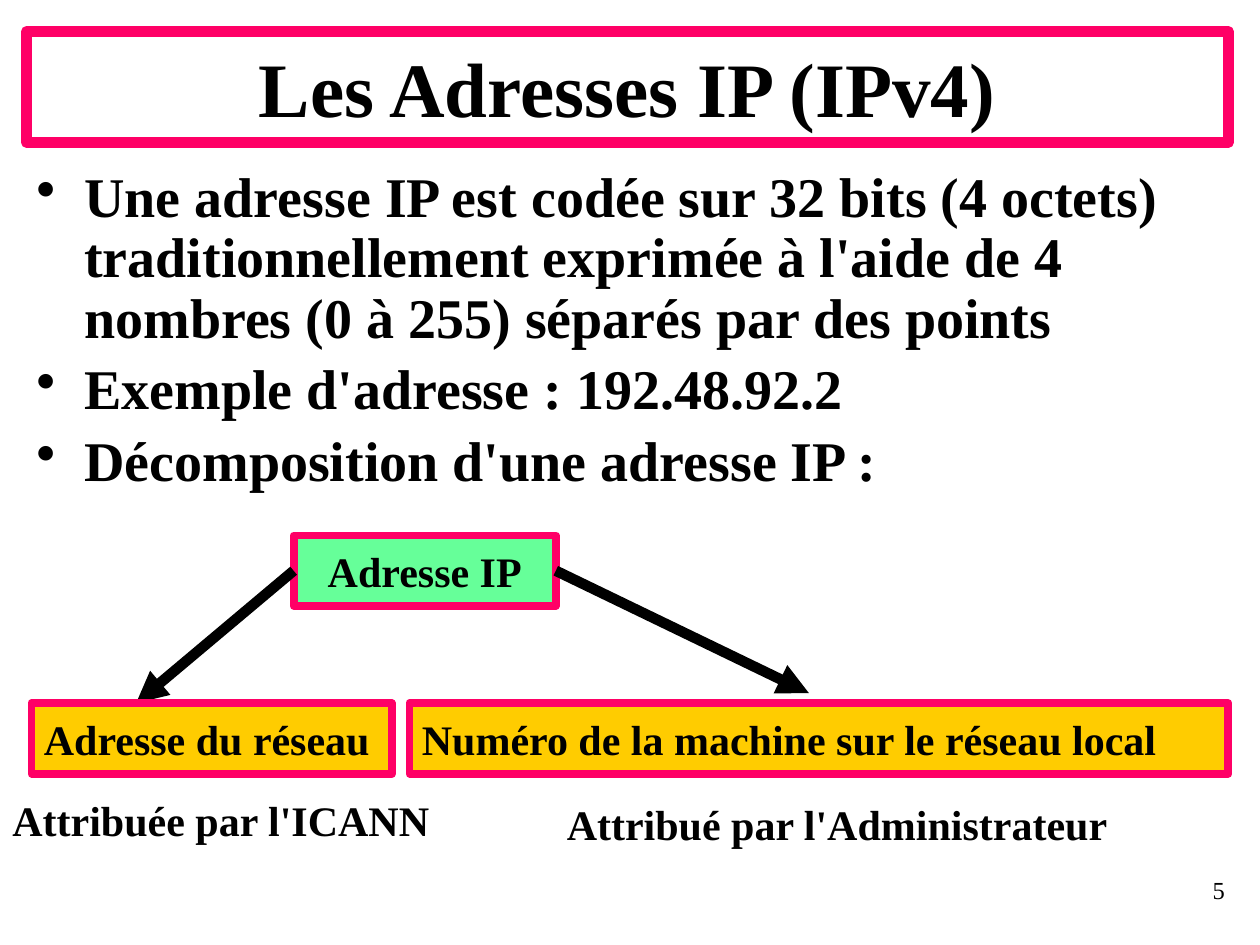
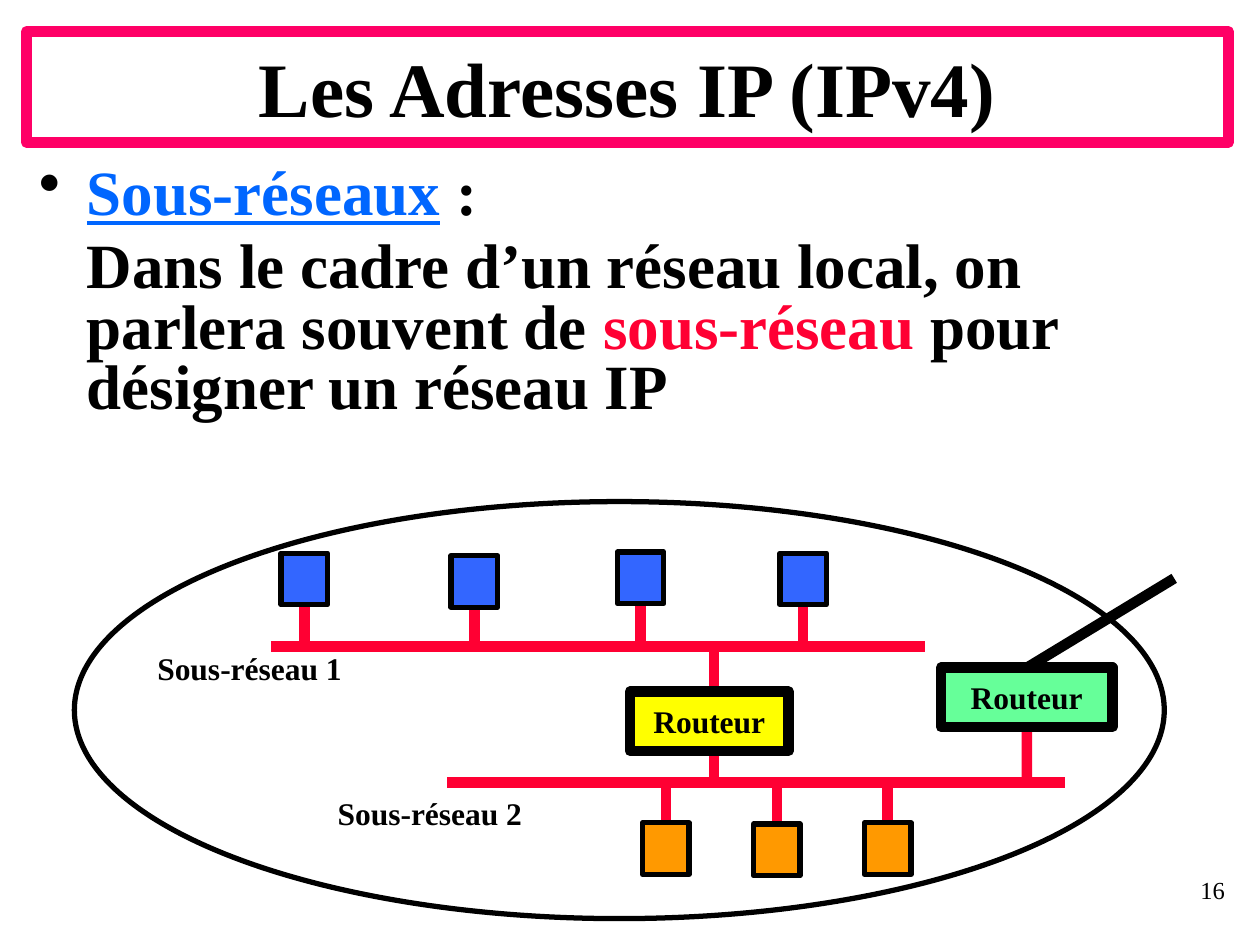
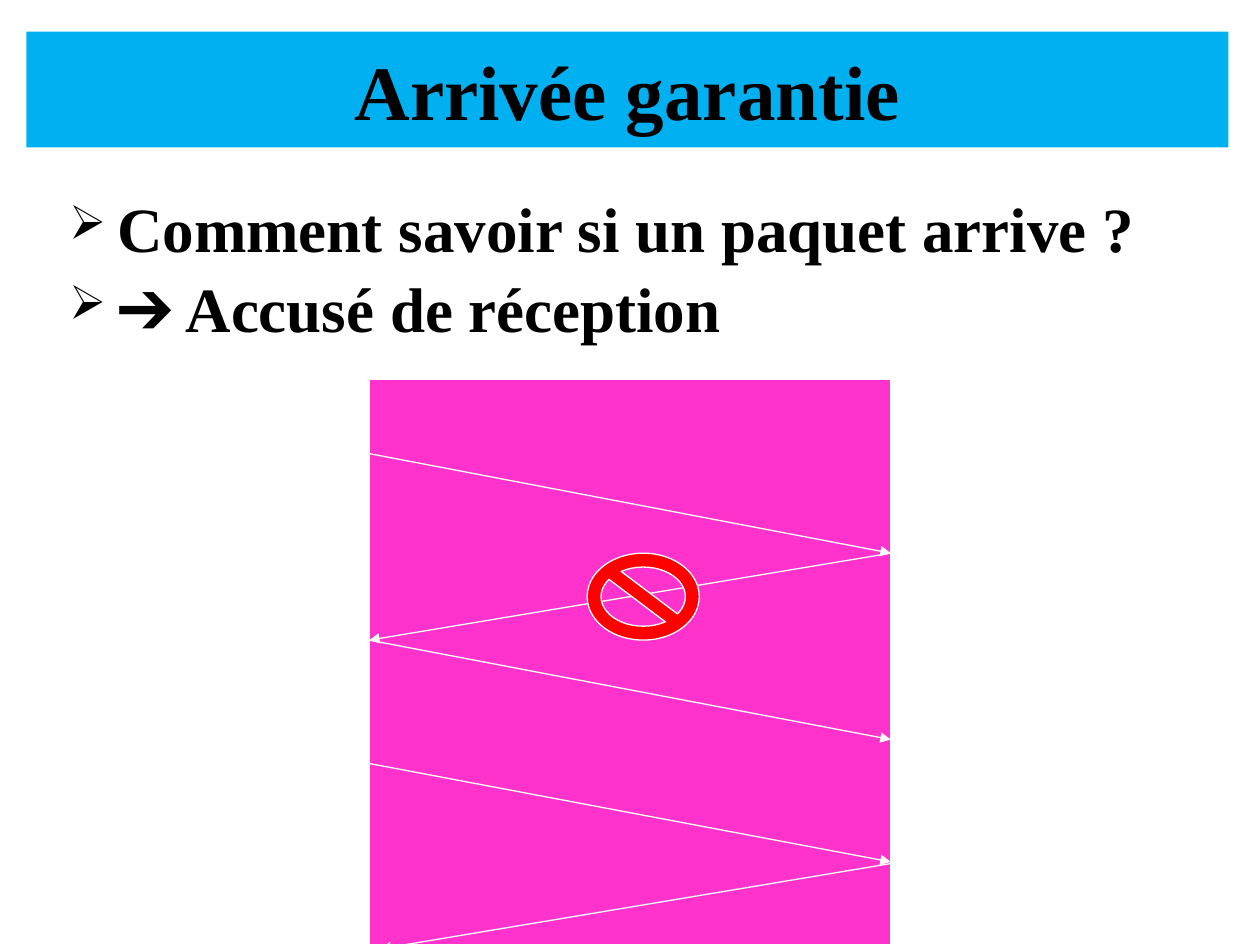
from dataclasses import dataclass
from typing import NamedTuple, Optional

from lxml.etree import SubElement
from pptx import Presentation
from pptx.dml.color import RGBColor
from pptx.enum.shapes import MSO_CONNECTOR, MSO_SHAPE
from pptx.enum.text import MSO_ANCHOR, PP_ALIGN
from pptx.oxml.ns import qn
from pptx.shapes.autoshape import Shape
from pptx.shapes.connector import Connector
from pptx.slide import Slide
from pptx.util import Pt

FONT = "Times New Roman"
BLACK = RGBColor(0x00, 0x00, 0x00)
WHITE = RGBColor(0xFF, 0xFF, 0xFF)
PINK = RGBColor(0xFF, 0x00, 0x66)
RED = RGBColor(0xFF, 0x00, 0x33)
PURE_RED = RGBColor(0xFF, 0x00, 0x00)
MAGENTA = RGBColor(0xFF, 0x33, 0xCC)
GREEN = RGBColor(0x66, 0xFF, 0x99)
GOLD = RGBColor(0xFF, 0xCC, 0x00)
YELLOW = RGBColor(0xFF, 0xFF, 0x00)
ORANGE = RGBColor(0xFF, 0x99, 0x00)
BLUE = RGBColor(0x33, 0x66, 0xFF)
LINK_BLUE = RGBColor(0x00, 0x66, 0xFF)
SKY = RGBColor(0x00, 0xB0, 0xF0)

TOP, LEFT, BOTTOM, RIGHT = range(4)
INDENT = 27.4
HOST_WIDTH, HOST_HEIGHT = 26.6, 29.5


class Box(NamedTuple):
    """Position and size in points."""

    left: float
    top: float
    width: float
    height: float


class Point(NamedTuple):
    """Place on the slide in points."""

    x: float
    y: float


class Span(NamedTuple):
    """Stretch of body text with one look."""

    text: str
    color: RGBColor = BLACK
    underline: bool = False


@dataclass(frozen=True)
class Label:
    """Single line of text and its style."""

    text: str
    size: float
    align: PP_ALIGN = PP_ALIGN.LEFT
    anchor: MSO_ANCHOR = MSO_ANCHOR.TOP
    bold: bool = True
    wrap: bool = True


@dataclass(frozen=True)
class Outline:
    """Colour and width of a line."""

    color: RGBColor
    width: float


@dataclass(frozen=True)
class BodyStyle:
    """Look of a body text."""

    size: float
    line_spacing: float
    bullet: str = "•"
    bullet_percent: int = 100


@dataclass(frozen=True)
class Paragraph:
    """Body paragraph, with or without a bullet."""

    spans: tuple[Span, ...]
    bulleted: bool = True


PINK_FRAME = Outline(PINK, 4.5)
BLACK_FRAME = Outline(BLACK, 6)
HOST_FRAME = Outline(BLACK, 3)
CABLE = Outline(RED, 6)
THIN_WHITE = Outline(WHITE, 0.75)


def lengths(box: Box) -> list[Pt]:
    """Return the four lengths of a box."""
    return [Pt(value) for value in box]


def write_label(shape: Shape, label: Label) -> None:
    """Write one formatted line in a shape."""
    frame = shape.text_frame
    frame.text = label.text
    frame.word_wrap = label.wrap
    frame.vertical_anchor = label.anchor
    paragraph = frame.paragraphs[0]
    paragraph.alignment = label.align
    font = paragraph.runs[0].font
    font.name, font.size, font.bold = FONT, Pt(label.size), label.bold
    font.color.rgb = BLACK


def add_text(slide: Slide, box: Box, label: Label) -> None:
    """Add a text box with one line."""
    write_label(slide.shapes.add_textbox(*lengths(box)), label)


def add_figure(
    slide: Slide,
    box: Box,
    fill: Optional[RGBColor],
    outline: Optional[Outline] = None,
    label: Optional[Label] = None,
    kind: MSO_SHAPE = MSO_SHAPE.RECTANGLE,
) -> Shape:
    """Add a preset shape with optional fill, outline and label."""
    shape = slide.shapes.add_shape(kind, *lengths(box))
    shape.shadow.inherit = False
    if fill is None:
        shape.fill.background()
    else:
        shape.fill.solid()
        shape.fill.fore_color.rgb = fill
    if outline is None:
        shape.line.fill.background()
    else:
        shape.line.color.rgb = outline.color
        shape.line.width = Pt(outline.width)
    if label:
        write_label(shape, label)
    return shape


def add_line(
    slide: Slide, start: Point, end: Point, outline: Outline, arrow: bool = False
) -> Connector:
    """Add a straight connector, with an arrowhead at its end if asked."""
    connector = slide.shapes.add_connector(
        MSO_CONNECTOR.STRAIGHT, *[Pt(value) for value in (*start, *end)]
    )
    connector.line.color.rgb = outline.color
    connector.line.width = Pt(outline.width)
    if arrow:
        SubElement(connector.line._get_or_add_ln(), qn("a:tailEnd"), type="triangle")
    SubElement(connector._element.spPr, qn("a:effectLst"))
    return connector


def add_body(
    slide: Slide, box: Box, style: BodyStyle, paragraphs: list[Paragraph]
) -> None:
    """Add the body text with its bullets."""
    frame = slide.shapes.add_textbox(*lengths(box)).text_frame
    frame.word_wrap = True
    for index, item in enumerate(paragraphs):
        paragraph = frame.add_paragraph() if index else frame.paragraphs[0]
        paragraph.line_spacing = style.line_spacing
        paragraph.space_before = Pt(style.size * 0.2)
        properties = paragraph._p.get_or_add_pPr()
        properties.set("marL", str(Pt(INDENT)))
        if item.bulleted:
            properties.set("indent", str(-Pt(INDENT)))
            color = SubElement(properties, qn("a:buClr"))
            SubElement(color, qn("a:srgbClr"), val=str(BLACK))
            percent = str(style.bullet_percent * 1000)
            SubElement(properties, qn("a:buSzPct"), val=percent)
            SubElement(properties, qn("a:buChar"), char=style.bullet)
        for span in item.spans:
            run = paragraph.add_run()
            run.text = span.text
            font = run.font
            font.name, font.size, font.bold = FONT, Pt(style.size), True
            font.underline = span.underline
            font.color.rgb = span.color


def add_title(
    slide: Slide,
    text: str,
    fill: RGBColor = WHITE,
    outline: Optional[Outline] = Outline(PINK, 6),
    height: float = 63.4,
) -> None:
    """Add the title band."""
    label = Label(text, 44, PP_ALIGN.CENTER, MSO_ANCHOR.MIDDLE)
    add_figure(slide, Box(15.1, 18, 686.9, height), fill, outline, label)


def add_number(slide: Slide, number: int) -> None:
    """Add the slide number."""
    label = Label(
        str(number), 14, PP_ALIGN.RIGHT, MSO_ANCHOR.MIDDLE, bold=False, wrap=False
    )
    add_text(slide, Box(557.3, 491, 149.8, 35.3), label)


def add_host(slide: Slide, place: Point, fill: RGBColor, bus_y: float, side: int) -> None:
    """Add a host and the cable from one of its sides to the bus."""
    middle = place.x + HOST_WIDTH / 2
    cable = add_line(slide, Point(middle, place.y), Point(middle, bus_y), CABLE)
    host = add_figure(slide, Box(*place, HOST_WIDTH, HOST_HEIGHT), fill, HOST_FRAME)
    cable.begin_connect(host, side)


def build_address_slide(slide: Slide) -> None:
    """Show how an IP address is made up."""
    add_title(slide, "Les Adresses IP (IPv4)")
    texts = (
        "Une adresse IP est codée sur 32 bits (4 octets) traditionnellement "
        "exprimée à l'aide de 4 nombres (0 à 255) séparés par des points",
        "Exemple d'adresse : 192.48.92.2",
        "Décomposition d'une adresse IP :",
    )
    add_body(
        slide,
        Box(13.7, 92.9, 684, 200.2),
        BodyStyle(32, 0.9),
        [Paragraph((Span(text),)) for text in texts],
    )
    address = add_figure(
        slide,
        Box(167.8, 306, 149.8, 40.3),
        GREEN,
        PINK_FRAME,
        Label("Adresse IP", 24, PP_ALIGN.CENTER, MSO_ANCHOR.MIDDLE),
    )
    for side, start, end in (
        (LEFT, Point(167.8, 324), Point(77.8, 401.8)),
        (RIGHT, Point(318.2, 324), Point(462.2, 396)),
    ):
        arrow = add_line(slide, start, end, BLACK_FRAME, arrow=True)
        arrow.begin_connect(address, side)
    for left, width, text in (
        (18, 205.9, "Adresse du réseau"),
        (234, 468, "Numéro de la machine sur le réseau local"),
    ):
        label = Label(text, 24, anchor=MSO_ANCHOR.MIDDLE)
        add_figure(slide, Box(left, 401.8, width, 40.3), GOLD, PINK_FRAME, label)
    add_text(slide, Box(0, 450.7, 262.8, 36), Label("Attribuée par l'ICANN", 24))
    add_text(
        slide,
        Box(316.8, 452.9, 324, 36),
        Label("Attribué par l'Administrateur", 24, wrap=False),
    )
    add_number(slide, 5)


def build_subnet_slide(slide: Slide) -> None:
    """Show two subnets joined by a router."""
    add_title(slide, "Les Adresses IP (IPv4)")
    add_body(
        slide,
        Box(15.1, 92.2, 678.2, 177.8),
        BodyStyle(36, 0.8),
        [
            Paragraph((Span("Sous-réseaux", LINK_BLUE, True), Span(" :"))),
            Paragraph(
                (
                    Span("Dans le cadre d’un réseau local, on parlera souvent de "),
                    Span("sous-réseau", RED),
                    Span(" pour désigner un réseau IP"),
                ),
                bulleted=False,
            ),
        ],
    )
    first_bus, second_bus = 369.4, 447.1
    router_label = Label("Routeur", 18, PP_ALIGN.CENTER, MSO_ANCHOR.MIDDLE)

    downlink = add_line(slide, Point(586.8, 415.4), Point(586.8, second_bus), CABLE)
    gateway = add_figure(
        slide, Box(537.8, 381.6, 97.9, 33.8), GREEN, BLACK_FRAME, router_label
    )
    downlink.begin_connect(gateway, BOTTOM)
    add_line(slide, Point(408, first_bus), Point(408, second_bus), CABLE)
    for left, right, bus_y in ((154.8, 528.5, first_bus), (255.6, 608.4, second_bus)):
        add_line(slide, Point(left, bus_y), Point(right, bus_y), CABLE)

    for place in (
        Point(160.6, 316.1),
        Point(257.8, 317.5),
        Point(352.8, 315.4),
        Point(445.7, 316.1),
    ):
        add_host(slide, place, BLUE, first_bus, BOTTOM)
    for index, top in enumerate((470.2, 470.9, 470.2)):
        add_host(slide, Point(367.2 + 63.4 * index, top), ORANGE, second_bus, TOP)

    add_figure(
        slide, Box(42.5, 286.6, 622.8, 238.3), None, HOST_FRAME, kind=MSO_SHAPE.OVAL
    )
    add_figure(slide, Box(360, 395.3, 90.7, 33.8), YELLOW, BLACK_FRAME, router_label)
    uplink = add_line(slide, Point(588.2, 379.4), Point(671, 330.5), BLACK_FRAME)
    uplink.begin_connect(gateway, TOP)
    for number, place in enumerate((Point(82.8, 367.2), Point(185.8, 450)), start=1):
        label = Label(f"Sous-réseau {number}", 18, wrap=False)
        add_text(slide, Box(*place, 120.2, 28.8), label)
    add_number(slide, 16)


def build_delivery_slide(slide: Slide) -> None:
    """Show packets and acknowledgements going back and forth."""
    add_title(slide, "Arrivée garantie", SKY, None, 66.2)
    texts = ("Comment savoir si un paquet arrive ?", "➔ Accusé de réception")
    add_body(
        slide,
        Box(32.4, 109.4, 651.6, 98.6),
        BodyStyle(36, 0.9, "➢", 75),
        [Paragraph((Span(text),)) for text in texts],
    )
    sender_x, receiver_x = 211, 509
    add_figure(
        slide,
        Box(sender_x, 216.7, receiver_x - sender_x, 323.3),
        MAGENTA,
        THIN_WHITE,
    )
    for start, end in (
        (Point(sender_x, 259.2), Point(receiver_x, 316.1)),
        (Point(receiver_x, 316.1), Point(sender_x, 365.8)),
        (Point(sender_x, 365.8), Point(receiver_x, 422.6)),
        (Point(sender_x, 436.3), Point(receiver_x, 492.5)),
        (Point(514.8, 492.5), Point(217.4, 542.2)),
    ):
        add_line(slide, start, end, THIN_WHITE, arrow=True)
    lost_sign = add_figure(
        slide,
        Box(335.5, 316.1, 64.1, 49.7),
        PURE_RED,
        THIN_WHITE,
        kind=MSO_SHAPE.NO_SYMBOL,
    )
    lost_sign.adjustments[0] = 0.16


def main() -> None:
    """Build the presentation and save it."""
    presentation = Presentation()
    presentation.slide_width, presentation.slide_height = Pt(720), Pt(540)
    blank = presentation.slide_layouts[6]
    for build in (build_address_slide, build_subnet_slide, build_delivery_slide):
        build(presentation.slides.add_slide(blank))
    presentation.save("out.pptx")


if __name__ == "__main__":
    main()
